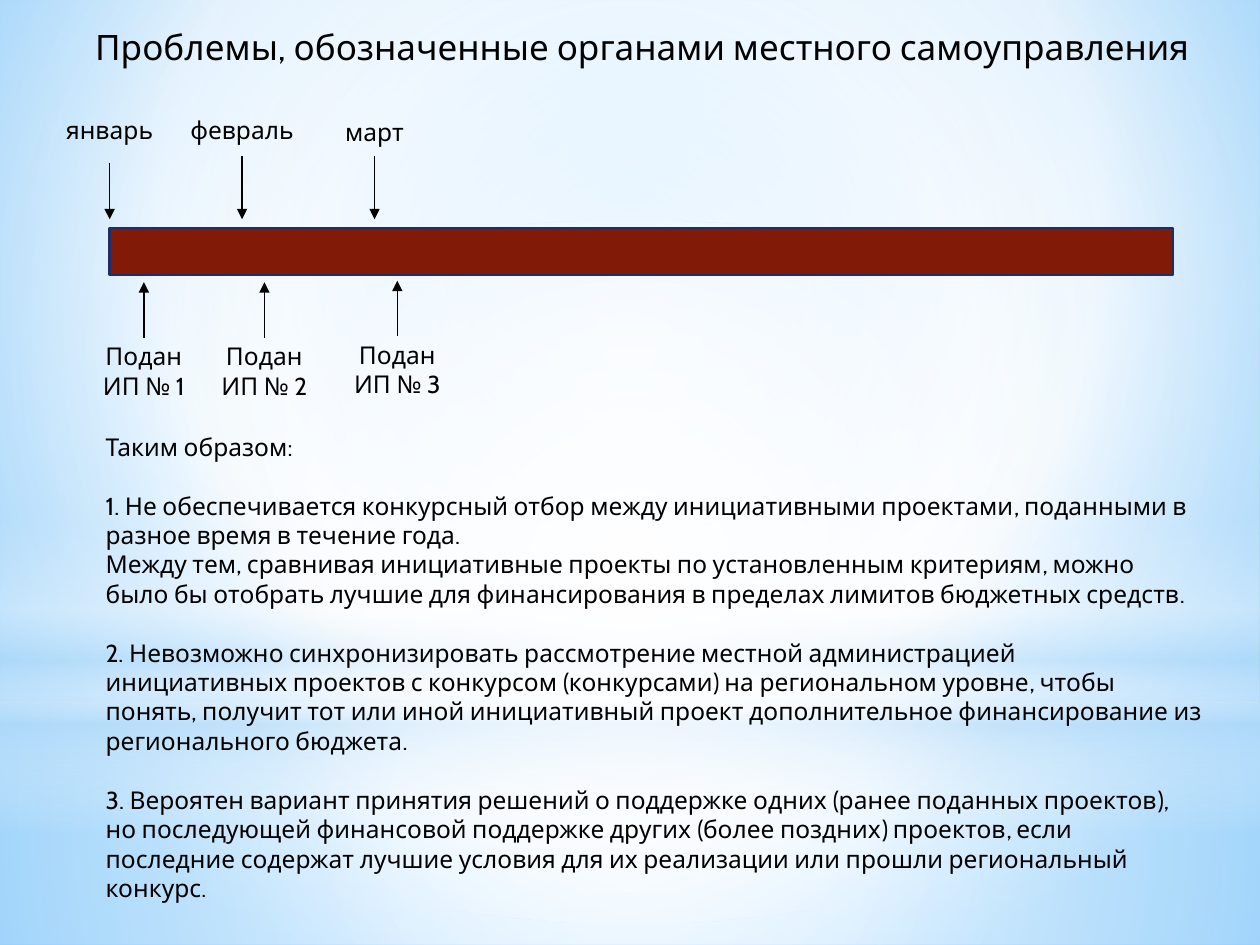
from lxml import etree
from pptx import Presentation
from pptx.dml.color import RGBColor
from pptx.enum.shapes import MSO_CONNECTOR, MSO_SHAPE
from pptx.enum.text import MSO_ANCHOR, MSO_AUTO_SIZE, PP_ALIGN
from pptx.oxml.ns import qn
from pptx.util import Cm, Pt

RECT, OVAL = MSO_SHAPE.RECTANGLE, MSO_SHAPE.OVAL
STRAIGHT = MSO_CONNECTOR.STRAIGHT
MIDDLE = MSO_ANCHOR.MIDDLE
NO_FIT = MSO_AUTO_SIZE.NONE
CENTER, LEFT = PP_ALIGN.CENTER, PP_ALIGN.LEFT
FONT = "Cabin"
BLACK, WHITE, SKY = "000000", "FFFFFF", "B4DCFA"
CENTRE_POINT = (50, 50, 50, 50)
GAP = 16.8

BANDS = [
    (RECT, (0, 14.17, 25.4, 4.88),
     [(0, WHITE, 91), (37, WHITE, 76), (100, SKY, 79)], CENTRE_POINT),
    (RECT, (0, 0, 25.4, 14.17),
     [(0, WHITE, 89), (48, WHITE, 62), (100, SKY, 79)], CENTRE_POINT),
    (RECT, (0, 10.46, 25.4, 6.35),
     [(0, WHITE, 0), (29, WHITE, 30), (45, SKY, 40), (55, WHITE, 26),
      (65, SKY, 60), (100, WHITE, 0)], None),
    (OVAL, (0, 4.45, 25.4, 14.17),
     [(0, WHITE, 100), (56, WHITE, 0)], CENTRE_POINT),
]
MONTHS = [
    ("январь", 2.21, 2.41, 1.32, 3.28),
    ("февраль", 4.88, 2.67, 1.32, 3.15),
    ("март", 7.55, 2.67, 1.4, 3.15),
]
PROJECTS = [
    ("Подан ИП № 1", 2.9, 6.81),
    ("Подан ИП № 2", 5.33, 6.81),
    ("Подан ИП № 3", 8.01, 6.78),
]
CONCLUSIONS = [
    ("Таким образом:", 0),
    ("1. Не обеспечивается конкурсный отбор между инициативными проектами, "
     "поданными в разное время в течение года.", GAP),
    ("Между тем, сравнивая инициативные проекты по установленным критериям, "
     "можно было бы отобрать лучшие для финансирования в пределах лимитов "
     "бюджетных средств.", 0),
    ("2. Невозможно синхронизировать рассмотрение местной администрацией "
     "инициативных проектов с конкурсом (конкурсами) на региональном уровне, "
     "чтобы понять, получит тот или иной инициативный проект дополнительное "
     "финансирование из регионального бюджета.", GAP),
    ("3. Вероятен вариант принятия решений о поддержке одних (ранее поданных "
     "проектов), но последующей финансовой поддержке других (более поздних) "
     "проектов, если последние содержат лучшие условия для их реализации или "
     "прошли региональный конкурс.", GAP),
]


def rgb(value):
    return RGBColor.from_string(value)


def child(parent, tag, **attrs):
    el = etree.SubElement(parent, qn(tag))
    for name, value in attrs.items():
        el.set(name, str(value))
    return el


def set_gradient(fill, parent, stops, focus):
    fill.solid()
    grad = etree.Element(qn("a:gradFill"), rotWithShape="1")
    gs_list = child(grad, "a:gsLst")
    for pos, color, alpha in stops:
        gs = child(gs_list, "a:gs", pos=pos * 1000)
        clr = child(gs, "a:srgbClr", val=color)
        if alpha < 100:
            child(clr, "a:alpha", val=alpha * 1000)
    if focus:
        sides = {k: v * 1000 for k, v in zip("ltrb", focus)}
        child(child(grad, "a:path", path="circle"), "a:fillToRect", **sides)
    else:
        child(grad, "a:lin", ang=90 * 60000, scaled=0)
    parent.replace(parent.find(qn("a:solidFill")), grad)


def add_shape(slide, kind, box):
    sp = slide.shapes.add_shape(kind, *map(Cm, box))
    sp.shadow.inherit = False
    return sp


def add_band(slide, kind, box, stops, focus):
    sp = add_shape(slide, kind, box)
    sp.line.fill.background()
    set_gradient(sp.fill, sp.element.spPr, stops, focus)


def add_bar(slide):
    sp = add_shape(slide, RECT, (2.21, 4.6, 21.44, 0.94))
    sp.fill.solid()
    sp.fill.fore_color.rgb = rgb("821A08")
    sp.line.color.rgb = rgb("1F2E69")
    sp.line.width = Pt(1.25)


def add_arrow(slide, x, start, end):
    line = slide.shapes.add_connector(STRAIGHT, Cm(x), Cm(start), Cm(x), Cm(end))
    line.line.color.rgb = rgb(BLACK)
    line.line.width = Pt(0.75)
    child(line.line._get_or_add_ln(), "a:tailEnd", type="triangle")
    child(line.element.spPr, "a:effectLst")


def style_run(r, size):
    r.font.size = Pt(size)
    r.font.color.rgb = rgb(BLACK)
    effects = child(r.font._element, "a:effectLst")
    shadow = child(effects, "a:outerShdw", blurRad=38100, dist=38100, dir=2700000)
    child(child(shadow, "a:srgbClr", val=BLACK), "a:alpha", val=43000)
    r.font.name = FONT


def write(tf, paragraphs, size=14, align=CENTER):
    tf.word_wrap = True
    tf.auto_size = NO_FIT
    tf.vertical_anchor = MIDDLE
    for i, (text, gap) in enumerate(paragraphs):
        p = tf.add_paragraph() if i else tf.paragraphs[0]
        p.alignment = align
        p.space_before = Pt(gap)
        r = p.add_run()
        r.text = text
        style_run(r, size)


def add_text(slide, box, paragraphs, align=CENTER):
    tf = slide.shapes.add_textbox(*map(Cm, box)).text_frame
    write(tf, paragraphs, align=align)
    return tf


def add_label(slide, text, x, top, width, height):
    add_text(slide, (x - width / 2, top, width, height), [(text, 0)])


def set_title(slide, text):
    title = slide.shapes.title
    title.left, title.top = Cm(1.3), Cm(-0.1)
    title.width, title.height = Cm(23.29), Cm(2.06)
    write(title.text_frame, [(text, 0)], size=20)
    slide.shapes._spTree.append(title.element)


def main():
    prs = Presentation()
    prs.slide_width, prs.slide_height = Cm(25.4), Cm(19.05)
    slide = prs.slides.add_slide(prs.slide_layouts[5])
    fill = slide.background.fill
    fill.solid()
    set_gradient(fill, slide.element.find(".//" + qn("p:bgPr")),
                 [(0, "9ED5FF", 100), (60, WHITE, 100), (100, "5BB9FF", 100)],
                 (20, 10, 20, 60))
    for band in BANDS:
        add_band(slide, *band)
    add_bar(slide)
    for text, x, width, height, start in MONTHS:
        add_label(slide, text, x, 1.96, width, height)
        add_arrow(slide, x, start, 4.42)
    for text, x, top in PROJECTS:
        add_label(slide, text, x, top, 2.67, 1.32)
        add_arrow(slide, x, top, top - 1.12)
    tf = add_text(slide, (1.88, 10.39, 22.63, 6.71), CONCLUSIONS, LEFT)
    tf.margin_bottom = Cm(0.72)
    set_title(slide, "Проблемы, обозначенные органами местного самоуправления")
    prs.save("out.pptx")


if __name__ == "__main__":
    main()
